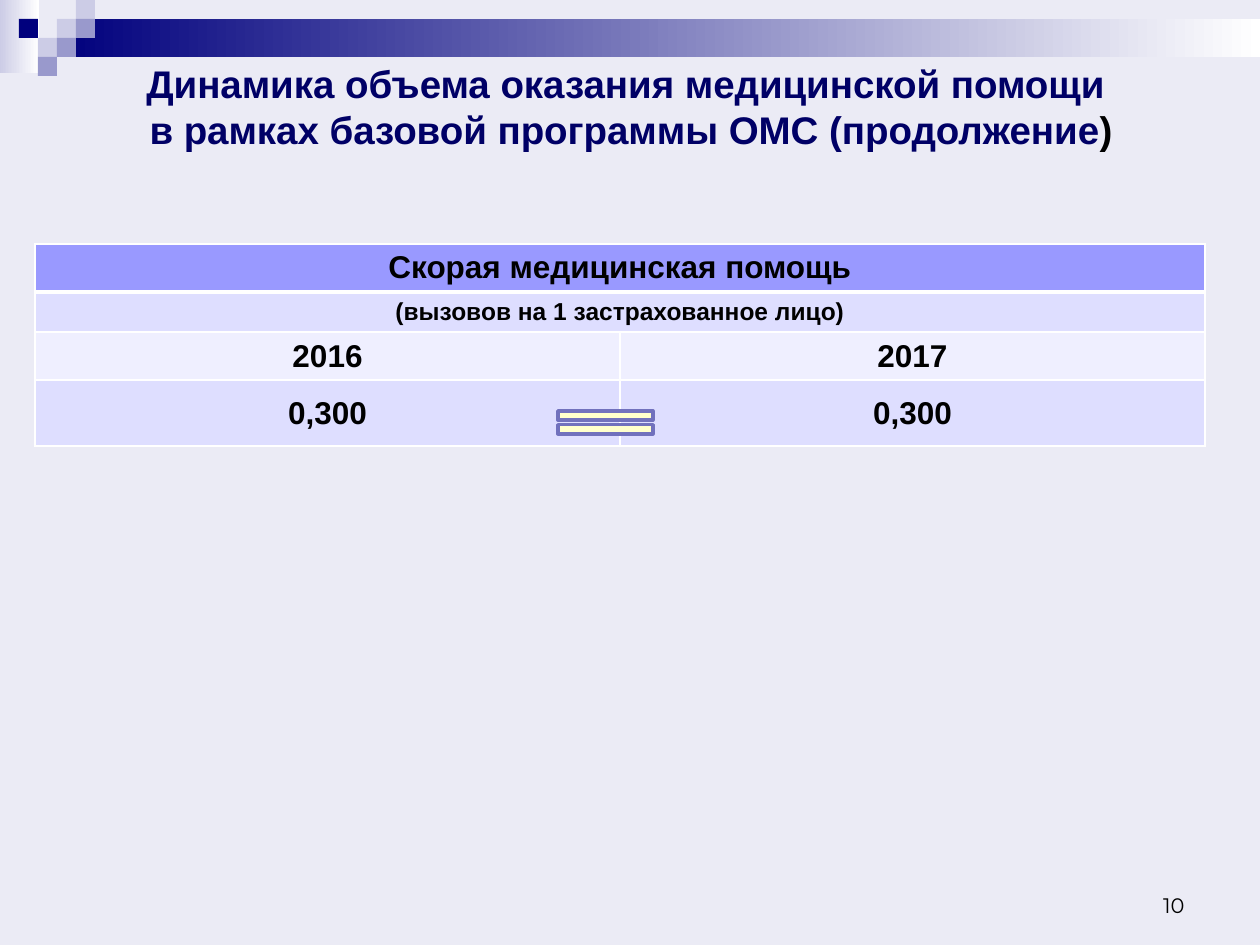
from dataclasses import dataclass

from lxml import etree
from pptx import Presentation
from pptx.dml.color import RGBColor
from pptx.enum.shapes import MSO_SHAPE
from pptx.enum.text import MSO_ANCHOR, PP_ALIGN
from pptx.oxml.ns import qn
from pptx.util import Pt

RECT, EQUAL = MSO_SHAPE.RECTANGLE, MSO_SHAPE.MATH_EQUAL
TOP, MIDDLE, BOTTOM = MSO_ANCHOR.TOP, MSO_ANCHOR.MIDDLE, MSO_ANCHOR.BOTTOM
CENTER, RIGHT = PP_ALIGN.CENTER, PP_ALIGN.RIGHT
EMU_PER_PX = 914400 / 126


@dataclass(frozen=True)
class Theme:
    font: str = "Arial"
    number_font: str = "Montserrat"
    background: str = "EBEBF5"
    navy: str = "00007D"
    violet: str = "9999CC"
    pale: str = "CCCCE6"
    white: str = "FFFFFF"
    title: str = "000066"
    text: str = "000000"
    header: str = "9999FF"
    band_dark: str = "DEDEFF"
    band_light: str = "EFEFFF"
    sign: str = "FFFFCC"
    sign_line: str = "7171BD"
    title_size: int = 22
    table_size: int = 18
    unit_size: int = 14
    number_size: int = 12


THEME = Theme()


def px(length):
    return round(length * EMU_PER_PX)


def emu(box):
    return [px(length) for length in box]


def rgb(color):
    return RGBColor.from_string(color)


def add_text(paragraph, text, *, size, color=THEME.text, font=THEME.font,
             bold=True, align=CENTER):
    """Append text to a paragraph; a newline becomes a line break."""
    paragraph.alignment = align
    for index, line in enumerate(text.split("\n")):
        if index:
            paragraph.add_line_break()
        run = paragraph.add_run()
        run.text = line
        run.font.size, run.font.bold, run.font.name = Pt(size), bold, font
        run.font.color.rgb = rgb(color)


def add_block(slide, box, color, fade_to=None):
    block = slide.shapes.add_shape(RECT, *emu(box))
    block.shadow.inherit = False
    block.line.fill.background()
    if fade_to is None:
        block.fill.solid()
        block.fill.fore_color.rgb = rgb(color)
        return
    block.fill.gradient()
    block.fill.gradient_angle = 0
    for stop, position, shade in zip(block.fill.gradient_stops, (0, 1), (color, fade_to)):
        stop.position = position
        stop.color.rgb = rgb(shade)


def add_banner(slide, box):
    left, top, width, height = box
    tile = 19
    # Fading strips
    add_block(slide, (left, top, 39, height), THEME.pale, THEME.white)
    add_block(slide, (left + 3 * tile, top + tile, width - 3 * tile, 2 * tile),
              THEME.navy, THEME.white)
    # Mosaic of tiles: column, row, colour
    mosaic = [(3, 1, THEME.pale), (4, 0, THEME.pale), (4, 1, THEME.violet),
              (2, 2, THEME.pale), (1, 1, THEME.navy), (3, 2, THEME.violet),
              (2, 3, THEME.violet)]
    for column, row, color in mosaic:
        add_block(slide, (left + column * tile, top + row * tile, tile, tile), color)


def add_title(slide, box):
    title = slide.shapes.title
    title.left, title.top, title.width, title.height = emu(box)
    frame = title.text_frame
    frame.word_wrap, frame.vertical_anchor = True, MIDDLE
    heading = frame.paragraphs[0]
    add_text(heading, "Динамика объема оказания медицинской помощи \n"
             "в рамках базовой программы ОМС (продолжение",
             size=THEME.title_size, color=THEME.title)
    add_text(heading, ")", size=THEME.title_size)


def set_borders(cell, top, bottom):
    properties = cell._tc.get_or_add_tcPr()
    widths = {"a:lnL": 1, "a:lnR": 1, "a:lnT": top, "a:lnB": bottom}
    for index, (tag, width) in enumerate(widths.items()):
        line = etree.Element(qn(tag), w=str(Pt(width)))
        fill = etree.SubElement(line, qn("a:solidFill"))
        etree.SubElement(fill, qn("a:srgbClr"), val=THEME.white)
        properties.insert(index, line)


def add_calls_table(slide, box):
    # Texts, row height, type size, fill, anchor
    rows = [
        (["Скорая медицинская помощь"], 48, THEME.table_size, THEME.header, TOP),
        (["(вызовов на 1 застрахованное лицо)"], 40, THEME.unit_size, THEME.band_dark, TOP),
        (["2016", "2017"], 48, THEME.table_size, THEME.band_light, TOP),
        (["0,300", "0,300"], 66, THEME.table_size, THEME.band_dark, MIDDLE),
    ]
    columns = 2
    table = slide.shapes.add_table(len(rows), columns, *emu(box)).table
    for column in table.columns:
        column.width = px(box[2] / columns)
    for index, (texts, height, size, color, anchor) in enumerate(rows):
        table.rows[index].height = px(height)
        if len(texts) < columns:
            table.cell(index, 0).merge(table.cell(index, columns - 1))
        for cell in table.rows[index].cells:
            cell.fill.solid()
            cell.fill.fore_color.rgb = rgb(color)
            cell.vertical_anchor = anchor
            set_borders(cell, top=3 if index == 1 else 1, bottom=3 if index == 0 else 1)
        for column, text in enumerate(texts):
            add_text(table.cell(index, column).text_frame.paragraphs[0], text, size=size)


def add_equal_sign(slide, box):
    sign = slide.shapes.add_shape(EQUAL, *emu(box))
    sign.shadow.inherit = False
    sign.fill.solid()
    sign.fill.fore_color.rgb = rgb(THEME.sign)
    sign.line.color.rgb = rgb(THEME.sign_line)
    sign.line.width = Pt(2)


def add_page_number(slide, box):
    frame = slide.shapes.add_textbox(*emu(box)).text_frame
    frame.word_wrap, frame.vertical_anchor = True, BOTTOM
    add_text(frame.paragraphs[0], "10", size=THEME.number_size,
             font=THEME.number_font, bold=False, align=RIGHT)


def main():
    deck = Presentation()
    deck.slide_width, deck.slide_height = px(1260), px(945)
    slide = deck.slides.add_slide(deck.slide_layouts[5])
    slide.background.fill.solid()
    slide.background.fill.fore_color.rgb = rgb(THEME.background)
    add_banner(slide, (0, 0, 1260, 73))
    add_title(slide, (64, 55, 1134, 102))
    add_calls_table(slide, (35, 244, 1170, 202))
    add_page_number(slide, (903, 861, 294, 63))
    add_equal_sign(slide, (541, 403, 129, 39))
    deck.save("out.pptx")


if __name__ == "__main__":
    main()
